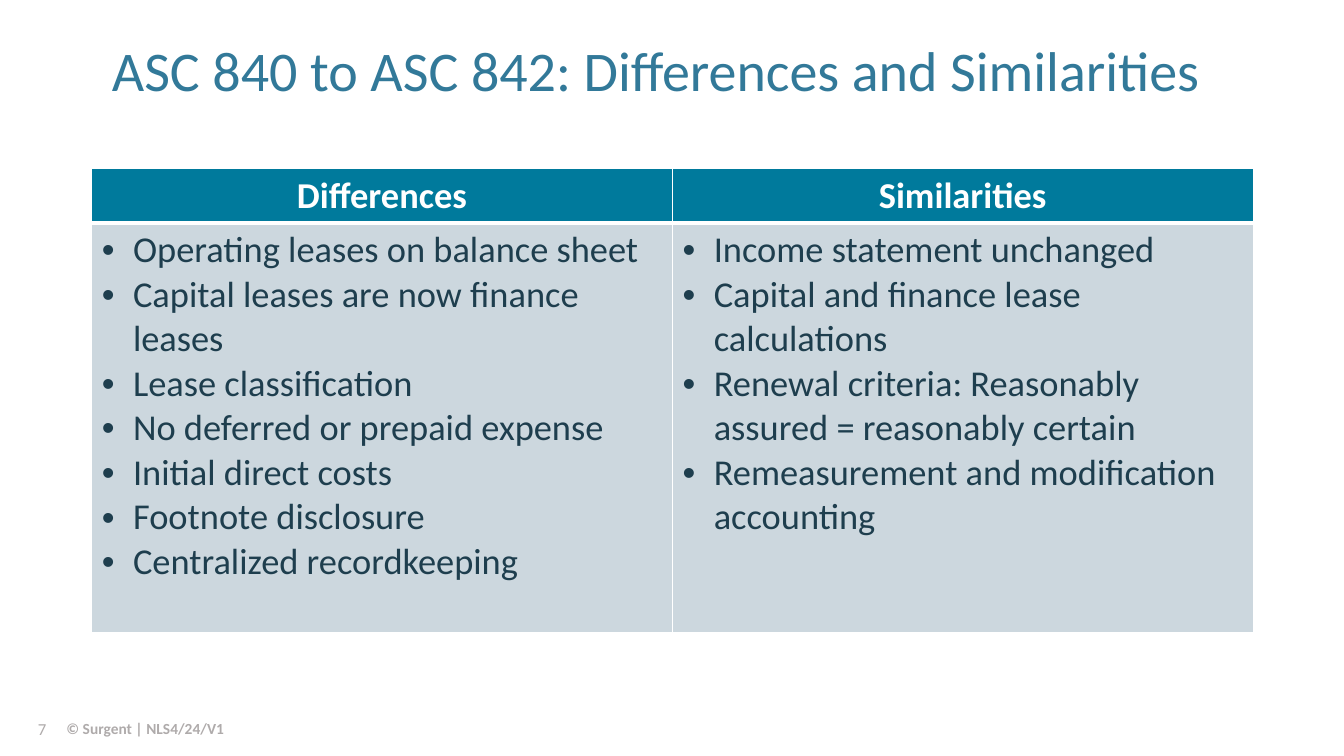
"""Build the slide comparing ASC 840 and ASC 842 in a two-column table."""
from lxml.etree import SubElement
from pptx import Presentation
from pptx.dml.color import RGBColor
from pptx.enum.text import MSO_ANCHOR, PP_ALIGN
from pptx.oxml import parse_xml
from pptx.oxml.ns import nsdecls, qn
from pptx.util import Inches, Pt

TITLE = "ASC 840 to ASC 842: Differences and Similarities"
COLUMNS = {
    "Differences": [
        "Operating leases on balance sheet",
        "Capital leases are now finance leases",
        "Lease classification",
        "No deferred or prepaid expense",
        "Initial direct costs",
        "Footnote disclosure",
        "Centralized recordkeeping",
    ],
    "Similarities": [
        "Income statement unchanged",
        "Capital and finance lease calculations",
        "Renewal criteria: Reasonably assured = reasonably certain",
        "Remeasurement and modification accounting",
    ],
}
FOOTER = "© Surgent | NLS4/24/V1"
SLIDE_NUMBER = "7"

FONT = "Calibri"
TITLE_COLOR, HEADER_FILL, BODY_FILL = "327999", "007A9C", "CCD7DE"
BODY_COLOR, FOOTER_COLOR, WHITE = "1E3E4E", "AFABAB", "FFFFFF"
TABLE_LEFT, TABLE_TOP, COLUMN_WIDTH = 0.91, 1.67, 5.76
HEADER_HEIGHT, BODY_HEIGHT = 0.54, 4.06
BULLET_INDENT = 0.31
FOOTER_TOP, FOOTER_HEIGHT, NUMBER_WIDTH, FOOTER_WIDTH = 7.03, 0.4, 0.56, 2.12


def color(value):
    return RGBColor.from_string(value)


def write(frame, lines, size, font_color, bold=False, align=PP_ALIGN.LEFT,
          bullet=False, spacing=None):
    for index, line in enumerate(lines):
        paragraph = frame.paragraphs[0] if index == 0 else frame.add_paragraph()
        paragraph.alignment = align
        paragraph.line_spacing = spacing
        if bullet:
            properties = paragraph._p.get_or_add_pPr()
            properties.set("marL", str(Inches(BULLET_INDENT)))
            properties.set("indent", str(-Inches(BULLET_INDENT)))
            SubElement(properties, qn("a:buFont"), typeface="Arial")
            SubElement(properties, qn("a:buChar"), char="•")
        run = paragraph.add_run()
        run.text = line
        run.font.name = FONT
        run.font.size = Pt(size)
        run.font.bold = bold
        run.font.color.rgb = color(font_color)


def style_cell(cell, fill, top=1, bottom=1):
    cell.fill.solid()
    cell.fill.fore_color.rgb = color(fill)
    properties = cell._tc.get_or_add_tcPr()
    borders = {"lnL": 1, "lnR": 1, "lnT": top, "lnB": bottom}
    for index, (side, width) in enumerate(borders.items()):
        properties.insert(index, parse_xml(
            f'<a:{side} {nsdecls("a")} w="{Pt(width)}"><a:solidFill>'
            f'<a:srgbClr val="{WHITE}"/></a:solidFill></a:{side}>'))


def add_footer_text(slide, text, left, width, size, **text_format):
    box = slide.shapes.add_textbox(
        Inches(left), Inches(FOOTER_TOP), Inches(width), Inches(FOOTER_HEIGHT))
    box.text_frame.word_wrap = True
    box.text_frame.vertical_anchor = MSO_ANCHOR.MIDDLE
    write(box.text_frame, [text], size, FOOTER_COLOR, **text_format)


def main():
    presentation = Presentation()
    presentation.slide_width, presentation.slide_height = Inches(13.33), Inches(7.5)
    slide = presentation.slides.add_slide(presentation.slide_layouts[5])

    title = slide.shapes.title
    title.left, title.top = Inches(1.01), Inches(0.37)
    title.width, title.height = Inches(11.75), Inches(0.77)
    title.text_frame.vertical_anchor = MSO_ANCHOR.MIDDLE
    write(title.text_frame, [TITLE], 40, TITLE_COLOR, spacing=0.75)

    table = slide.shapes.add_table(
        2, len(COLUMNS), Inches(TABLE_LEFT), Inches(TABLE_TOP),
        Inches(COLUMN_WIDTH * len(COLUMNS)),
        Inches(HEADER_HEIGHT + BODY_HEIGHT)).table
    table.rows[0].height = Inches(HEADER_HEIGHT)
    table.rows[1].height = Inches(BODY_HEIGHT)
    for index, (heading, points) in enumerate(COLUMNS.items()):
        table.columns[index].width = Inches(COLUMN_WIDTH)
        header, body = table.cell(0, index), table.cell(1, index)
        style_cell(header, HEADER_FILL, bottom=3)
        style_cell(body, BODY_FILL, top=3)
        write(header.text_frame, [heading], 26, WHITE, bold=True,
              align=PP_ALIGN.CENTER)
        write(body.text_frame, points, 26, BODY_COLOR, bullet=True)

    add_footer_text(slide, FOOTER, NUMBER_WIDTH, FOOTER_WIDTH, 11, bold=True)
    add_footer_text(slide, SLIDE_NUMBER, 0, NUMBER_WIDTH, 12, align=PP_ALIGN.RIGHT)
    presentation.save("out.pptx")


if __name__ == "__main__":
    main()
